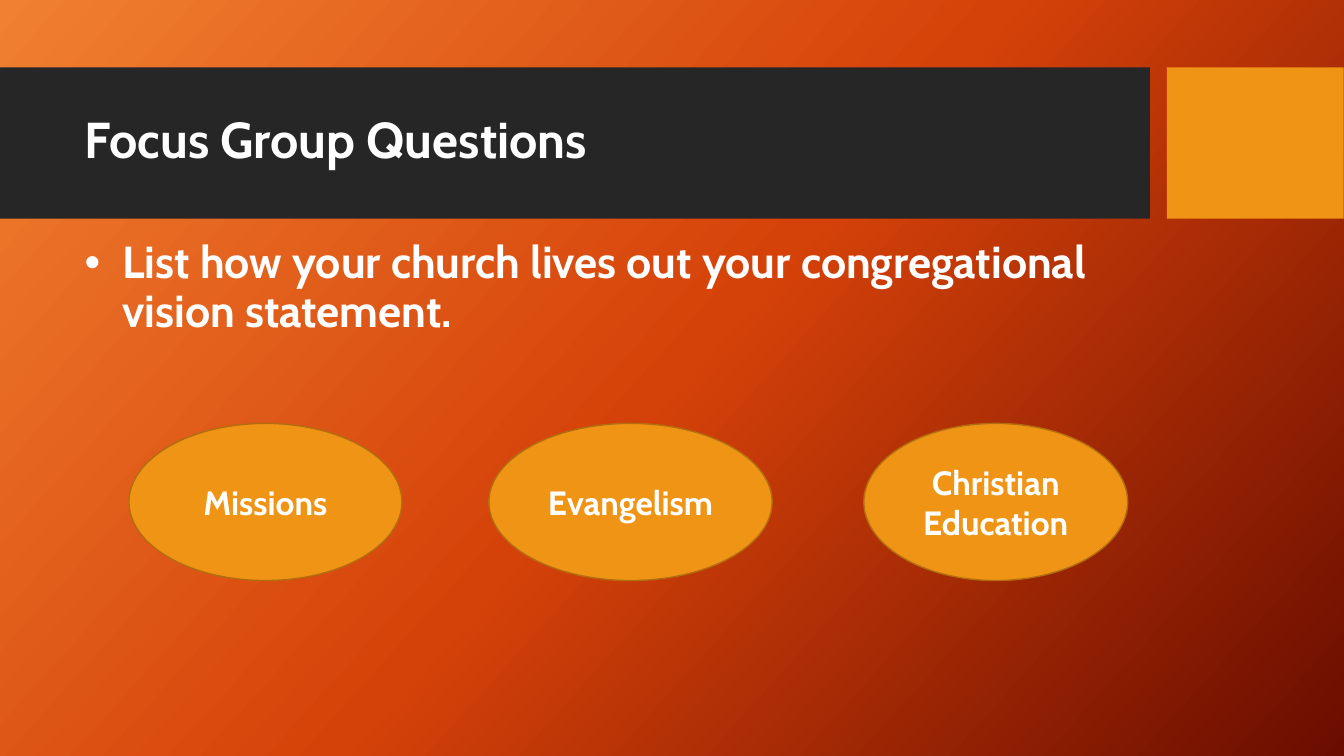
import copy

import lxml.etree
import pptx
import pptx.dml.color
import pptx.enum.shapes
import pptx.enum.text
import pptx.oxml.ns
import pptx.util
from pptx.util import Cm

WHITE = pptx.dml.color.RGBColor(0xFF, 0xFF, 0xFF)
CHARCOAL = pptx.dml.color.RGBColor(0x26, 0x26, 0x26)
AMBER = pptx.dml.color.RGBColor(0xF0, 0x94, 0x15)
BRONZE = pptx.dml.color.RGBColor(0xB2, 0x6D, 0x10)
ORANGE = pptx.dml.color.RGBColor(0xF1, 0x80, 0x31)
VERMILION = pptx.dml.color.RGBColor(0xD5, 0x42, 0x09)
MAROON = pptx.dml.color.RGBColor(0x6A, 0x0D, 0x00)

BAND_TOP, BAND_HEIGHT = Cm(1.7), Cm(3.81)
MINISTRY_TOP, MINISTRY_HEIGHT = Cm(10.67), Cm(3.96)
MINISTRIES = [
    ("Missions", Cm(3.25), Cm(6.88)),
    ("Evangelism", Cm(12.32), Cm(7.14)),
    ("Christian Education", Cm(21.77), Cm(6.65)),
]


def paint_background(slide):
    fill = slide.background.fill
    fill.gradient()
    fill.gradient_angle = 318
    stop_list = slide.background._cSld.find(".//" + pptx.oxml.ns.qn("a:gsLst"))
    stop_list.insert(1, copy.deepcopy(stop_list[0]))
    colours = (ORANGE, VERMILION, MAROON)
    for stop, colour, position in zip(fill.gradient_stops, colours, (0, 0.5, 1)):
        stop.color.rgb = colour
        stop.position = position


def add_filled(slide, kind, left, top, width, height, colour):
    shape = slide.shapes.add_shape(kind, left, top, width, height)
    shape.shadow.inherit = False
    shape.fill.solid()
    shape.fill.fore_color.rgb = colour
    return shape


def add_band(slide, left, width, colour):
    band = add_filled(slide, pptx.enum.shapes.MSO_SHAPE.RECTANGLE,
                      left, BAND_TOP, width, BAND_HEIGHT, colour)
    band.line.fill.background()


def format_text(shape, text, size, alignment, anchor):
    frame = shape.text_frame
    frame.text = text
    frame.word_wrap = True
    frame.auto_size = pptx.enum.text.MSO_AUTO_SIZE.NONE
    frame.vertical_anchor = anchor
    paragraph = frame.paragraphs[0]
    paragraph.alignment = alignment
    paragraph.space_before = pptx.util.Pt(0)
    paragraph.font.name = "Cabin"
    paragraph.font.size = pptx.util.Pt(size)
    paragraph.font.bold = True
    paragraph.font.color.rgb = WHITE
    return paragraph


def add_bullet(paragraph):
    properties = paragraph._p.get_or_add_pPr()
    properties.set("marL", str(Cm(0.64)))
    properties.set("indent", str(-Cm(0.64)))
    font = lxml.etree.SubElement(properties, pptx.oxml.ns.qn("a:buFont"))
    font.set("typeface", "Arial")
    bullet = lxml.etree.SubElement(properties, pptx.oxml.ns.qn("a:buChar"))
    bullet.set("char", "•")


def place_text(slide, placeholder, box, text, size, anchor, bulleted=False):
    placeholder.left, placeholder.top, placeholder.width, placeholder.height = box
    slide.shapes.element.append(placeholder.element)
    if bulleted:
        add_bullet(placeholder.text_frame.paragraphs[0])
    paragraph = format_text(placeholder, text, size,
                            pptx.enum.text.PP_ALIGN.LEFT, anchor)
    paragraph.line_spacing = 0.9


def add_ministry(slide, label, left, width):
    ministry = add_filled(slide, pptx.enum.shapes.MSO_SHAPE.OVAL,
                          left, MINISTRY_TOP, width, MINISTRY_HEIGHT, AMBER)
    ministry.line.color.rgb = BRONZE
    ministry.line.width = pptx.util.Pt(1)
    format_text(ministry, label, 24, pptx.enum.text.PP_ALIGN.CENTER,
                pptx.enum.text.MSO_ANCHOR.MIDDLE)


def main():
    presentation = pptx.Presentation()
    presentation.slide_width = Cm(33.87)
    presentation.slide_height = Cm(19.05)
    slide = presentation.slides.add_slide(presentation.slide_layouts[1])
    title, question = slide.placeholders

    paint_background(slide)
    add_band(slide, Cm(0), Cm(28.98), CHARCOAL)
    add_band(slide, Cm(29.41), Cm(4.45), AMBER)
    place_text(slide, title, (Cm(1.88), Cm(2.08), Cm(26.7), Cm(3)),
               "Focus Group Questions", 36, pptx.enum.text.MSO_ANCHOR.MIDDLE)
    place_text(slide, question, (Cm(1.88), Cm(5.92), Cm(28.3), Cm(13.13)),
               "List how your church lives out your congregational vision statement.",
               32, pptx.enum.text.MSO_ANCHOR.TOP, bulleted=True)
    for label, left, width in MINISTRIES:
        add_ministry(slide, label, left, width)

    presentation.save("out.pptx")


if __name__ == "__main__":
    main()
